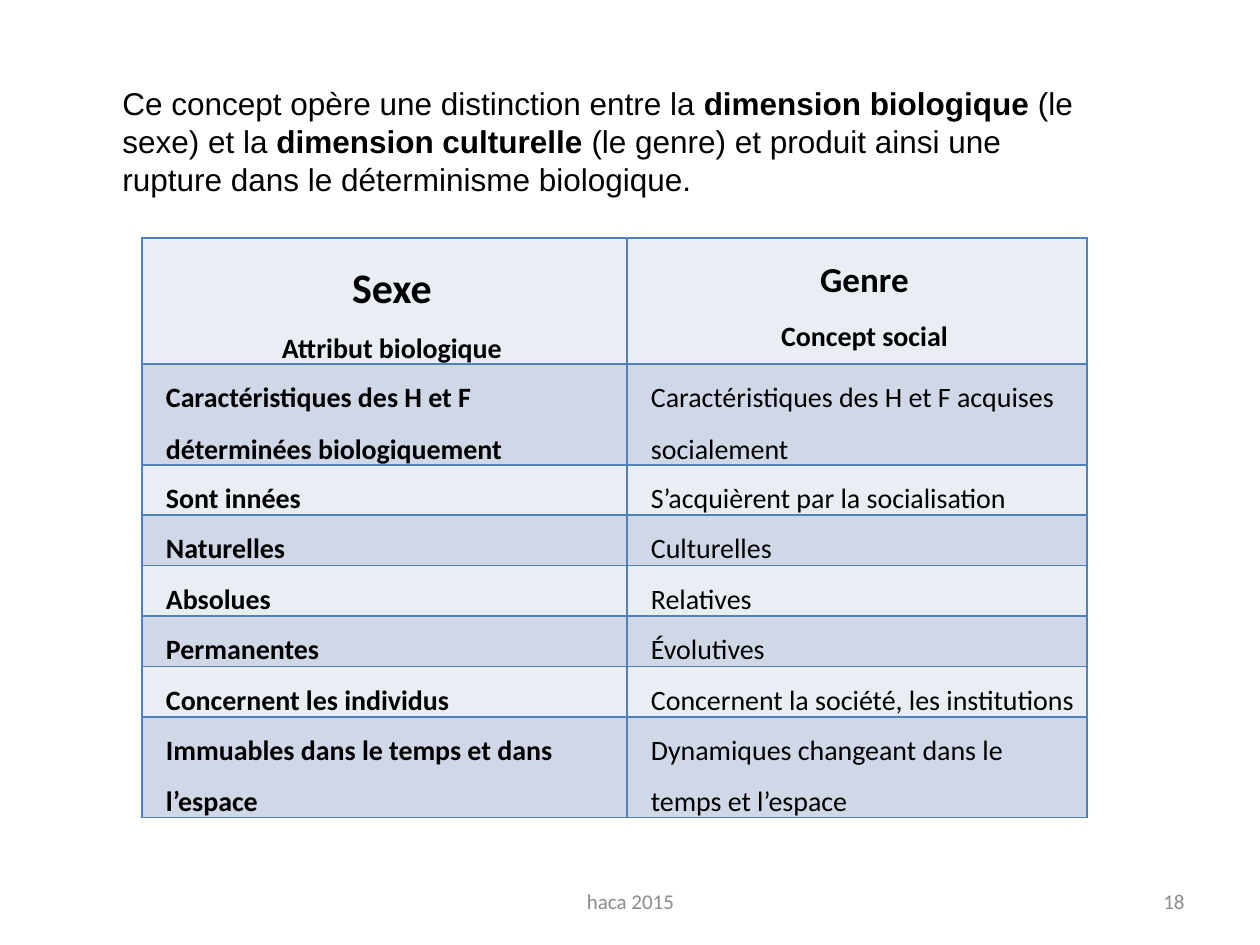
from lxml import etree
from pptx import Presentation, util as u
from pptx.dml.color import RGBColor
from pptx.enum import text as t
from pptx.oxml.ns import qn

SCALE = 914400 / 126
LEFT, MID, RIGHT = t.PP_ALIGN.LEFT, t.PP_ALIGN.CENTER, t.PP_ALIGN.RIGHT


def px(n):
    return u.Emu(round(n * SCALE))


def write(par, *runs, size=16, font="Calibri", color="000000", align=LEFT, space=None, indent=0):
    """Fill a paragraph with (words, bold) runs."""
    par.alignment = align
    par.line_spacing = space
    if indent:
        par._p.get_or_add_pPr().set("marL", str(px(indent)))
    for words, bold in runs:
        run = par.add_run()
        run.text = words
        run.font.size = u.Pt(size)
        run.font.name = font
        run.font.bold = bold
        run.font.color.rgb = RGBColor.from_string(color)


deck = Presentation()
deck.slide_width, deck.slide_height = px(1260), px(945)
slide = deck.slides.add_slide(deck.slide_layouts[6])

# Footer, page number and introduction
intro = [
    ("Ce concept opère une distinction entre la ", False),
    ("dimension biologique", True),
    (" (le sexe) et la ", False),
    ("dimension culturelle", True),
    (" (le genre) et produit ainsi une rupture dans le déterminisme biologique.", False),
]
grey = dict(size=12, color="8C8C8C")
middle, top = t.MSO_ANCHOR.MIDDLE, t.MSO_ANCHOR.TOP
for place, anchor, runs, style in [
    ((431, 876, 399, 50), middle, [("haca 2015", False)], dict(grey, align=MID)),
    ((903, 876, 294, 50), middle, [("18", False)], dict(grey, align=RIGHT)),
    ((110, 78, 976, 162), top, intro, dict(size=18, font="Arial")),
]:
    frame = slide.shapes.add_textbox(*map(px, place)).text_frame
    frame.word_wrap = True
    frame.vertical_anchor = anchor
    write(frame.paragraphs[0], *runs, **style)

# Comparison table: each cell lists its (words, size) lines
heads = [
    [("Sexe", 24), ("Attribut biologique", 16)],
    [("Genre", 20), ("Concept social", 16)],
]
pairs = [
    ("Caractéristiques des H et F déterminées biologiquement",
     "Caractéristiques des H et F acquises socialement"),
    ("Sont innées", "S’acquièrent par la socialisation"),
    ("Naturelles", "Culturelles"),
    ("Absolues", "Relatives"),
    ("Permanentes", "Évolutives"),
    ("Concernent les individus", "Concernent la société, les institutions"),
    ("Immuables dans le temps et dans l’espace",
     "Dynamiques changeant dans le temps et l’espace"),
]
rows = [heads] + [[[(words, 16)] for words in pair] for pair in pairs]
widths = [485, 460]
heights = [126, 100, 50, 50, 50, 50, 50, 100]
fills = ["E9EDF4", "D0D8E8"]

table = slide.shapes.add_table(
    len(rows), 2, px(142), px(238), px(sum(widths)), px(sum(heights))).table
for col, width in zip(table.columns, widths):
    col.width = px(width)
for row, height in zip(table.rows, heights):
    row.height = px(height)

for r, row in enumerate(rows):
    for c, lines in enumerate(row):
        cell = table.cell(r, c)
        cell.margin_left = cell.margin_right = px(9)
        cell.margin_top = cell.margin_bottom = 0
        # Borders come before the fill in the cell properties
        props = cell._tc.get_or_add_tcPr()
        for side in ("a:lnL", "a:lnR", "a:lnT", "a:lnB"):
            line = etree.SubElement(props, qn(side), w=str(u.Pt(1)))
            solid = etree.SubElement(line, qn("a:solidFill"))
            etree.SubElement(solid, qn("a:srgbClr"), val="4F81BD")
        cell.fill.solid()
        cell.fill.fore_color.rgb = RGBColor.from_string(fills[r % 2])
        for i, (words, size) in enumerate(lines):
            frame = cell.text_frame
            par = frame.add_paragraph() if i else frame.paragraphs[0]
            write(par, (words, r == 0 or c == 0), size=size, space=1.5,
                  indent=15, align=LEFT if r else MID)

deck.save("out.pptx")
